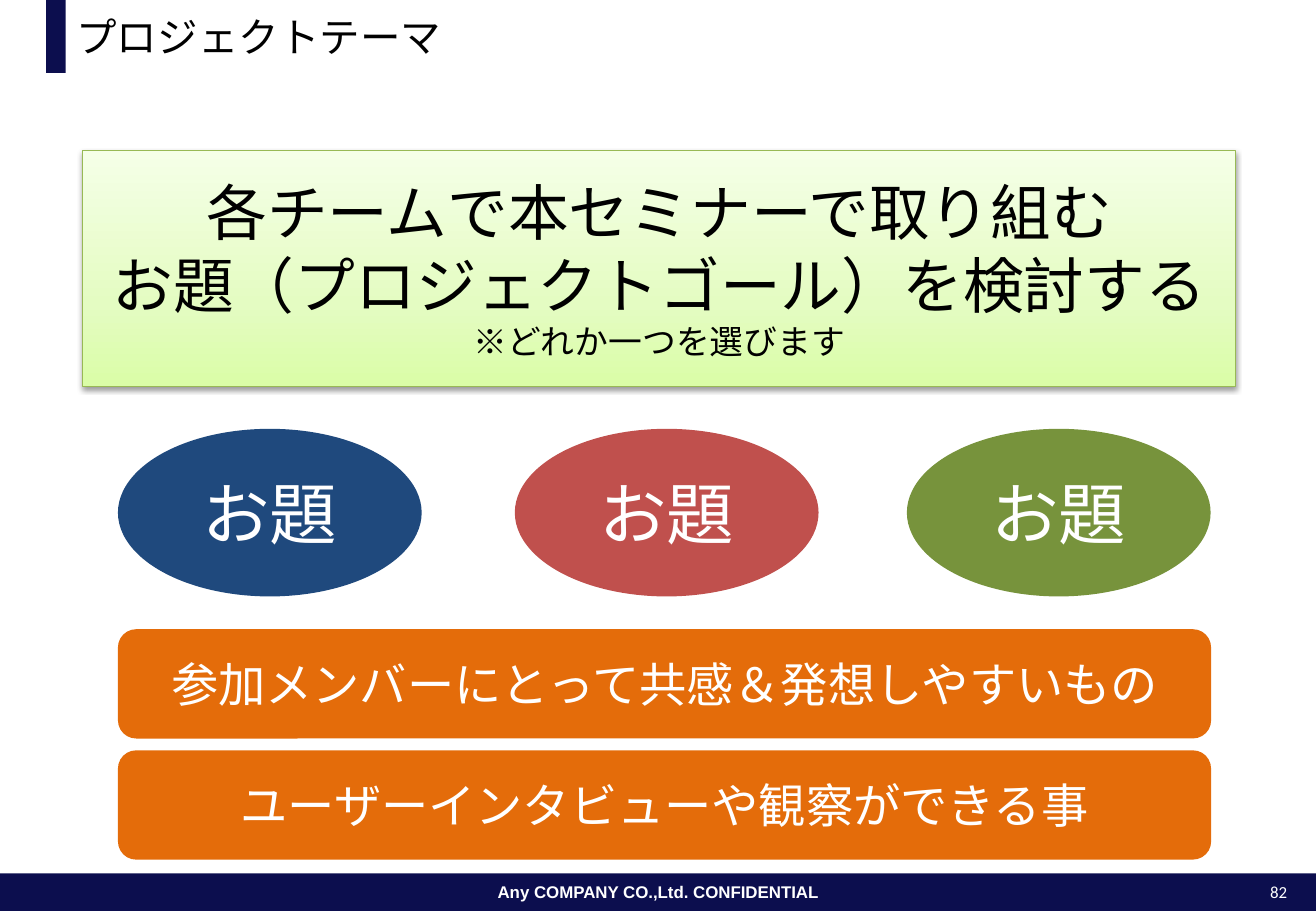
from copy import deepcopy

from lxml.etree import SubElement
from pptx import Presentation
from pptx.dml.color import RGBColor
from pptx.enum.shapes import MSO_SHAPE as Shape
from pptx.enum.text import MSO_ANCHOR as Anchor, MSO_AUTO_SIZE as AutoSize, PP_ALIGN as Align
from pptx.oxml.ns import qn
from pptx.util import Inches, Pt

NAVY = RGBColor(0x0C, 0x0E, 0x4E)
BLUE = RGBColor(0x1F, 0x49, 0x7D)
RED = RGBColor(0xC0, 0x50, 0x4D)
GREEN = RGBColor(0x77, 0x93, 0x3C)
ORANGE = RGBColor(0xE4, 0x6C, 0x0A)
LIME_EDGE = RGBColor(0x98, 0xB9, 0x55)
LIME_STOPS = [
    (0, RGBColor(0xDA, 0xFD, 0xA7)),
    (0.35, RGBColor(0xE4, 0xFC, 0xC2)),
    (1, RGBColor(0xF5, 0xFF, 0xE7)),
]
BLACK = RGBColor(0, 0, 0)
WHITE = RGBColor(0xFF, 0xFF, 0xFF)
JAPANESE = "Noto Sans CJK JP"


class ThemeSlide:
    """Places elements on a grid of 100 columns by 100 rows."""

    def __init__(self, deck):
        self.column = deck.slide_width / 100
        self.row = deck.slide_height / 100
        self.slide = deck.slides.add_slide(deck.slide_layouts[5])

    def area(self, left, top, width, height):
        return (round(left * self.column), round(top * self.row),
                round(width * self.column), round(height * self.row))

    def add_lines(self, holder, lines, color, align=Align.CENTER, font=JAPANESE,
                  bold=False, wrap=True):
        """Each line is a (text, size) pair."""
        frame = holder.text_frame
        frame.word_wrap = wrap
        frame.auto_size = AutoSize.NONE
        frame.vertical_anchor = Anchor.MIDDLE
        for index, (text, size) in enumerate(lines):
            paragraph = frame.add_paragraph() if index else frame.paragraphs[0]
            paragraph.alignment = align
            run = paragraph.add_run()
            run.text = text
            run.font.size = Pt(size)
            run.font.bold = bold
            run.font.color.rgb = color
            run.font.name = font
            SubElement(run.font._element, qn("a:ea"), typeface=font)

    def title(self, text, size, *cells):
        heading = self.slide.shapes.title
        heading.left, heading.top, heading.width, heading.height = self.area(*cells)
        self.add_lines(heading, [(text, size)], BLACK, Align.LEFT)

    def shape(self, kind, fill, *cells):
        block = self.slide.shapes.add_shape(kind, *self.area(*cells))
        block.shadow.inherit = False
        block.line.fill.background()
        if fill is not None:
            block.fill.solid()
            block.fill.fore_color.rgb = fill
        return block

    def label(self, text, size, *cells, **style):
        box = self.slide.shapes.add_textbox(*self.area(*cells))
        self.add_lines(box, [(text, size)], WHITE, wrap=False, **style)

    def gradient_panel(self, lines, *cells):
        panel = self.shape(Shape.RECTANGLE, None, *cells)
        panel.line.color.rgb = LIME_EDGE
        panel.line.width = Pt(0.75)
        panel.fill.gradient()
        panel.fill.gradient_angle = 90
        # A third stop, then colours and positions for all
        properties = panel._element.spPr
        stop_list = properties.find(qn("a:gradFill")).find(qn("a:gsLst"))
        stop_list.append(deepcopy(stop_list[0]))
        for stop, (position, color) in zip(panel.fill.gradient_stops, LIME_STOPS):
            stop.position = position
            stop.color.rgb = color
        # Soft shadow below
        effects = properties.find(qn("a:effectLst"))
        shadow = SubElement(effects, qn("a:outerShdw"), blurRad=str(int(Pt(3.1))),
                            dist=str(int(Pt(1.6))), dir="5400000", rotWithShape="0")
        shade = SubElement(shadow, qn("a:srgbClr"), val=str(BLACK))
        SubElement(shade, qn("a:alpha"), val="38000")
        self.add_lines(panel, lines, BLACK)


def main():
    deck = Presentation()
    deck.slide_width, deck.slide_height = Inches(10.83), Inches(7.5)
    page = ThemeSlide(deck)

    # Footer band and page number
    footer = page.shape(Shape.RECTANGLE, NAVY, 0, 95.87, 100, 4.13)
    page.add_lines(footer, [("Any COMPANY CO.,Ltd. CONFIDENTIAL", 10)], WHITE,
                   font="Arial", bold=True, wrap=False)
    page.label("82", 10, 94.92, 96.13, 3.79, 3.6, font="Calibri", align=Align.RIGHT)

    # Title with its accent bar
    page.shape(Shape.RECTANGLE, NAVY, 3.51, 0, 1.48, 8)
    page.title("プロジェクトテーマ", 24, 4.89, 0, 93.81, 8)

    # Team task
    page.gradient_panel([
        ("各チームで本セミナーで取り組む", 36),
        ("お題（プロジェクトゴール）を検討する", 36),
        ("※どれか一つを選びます", 20),
    ], 6.28, 16.53, 87.63, 25.87)

    # Three candidate topics
    for left, color in [(8.96, BLUE), (39.12, RED), (68.91, GREEN)]:
        topic = page.shape(Shape.OVAL, color, left, 47.07, 23.08, 18.4)
        page.add_lines(topic, [("お題", 40)], WHITE)

    # Selection criteria
    criteria = ["参加メンバーにとって共感＆発想しやすいもの",
                "ユーザーインタビューや観察ができる事"]
    for index, text in enumerate(criteria):
        criterion = page.shape(Shape.ROUNDED_RECTANGLE, ORANGE,
                               8.96, 69.07 + 13.3 * index, 83.07, 12)
        page.add_lines(criterion, [(text, 28)], WHITE)

    deck.save("out.pptx")


if __name__ == "__main__":
    main()
